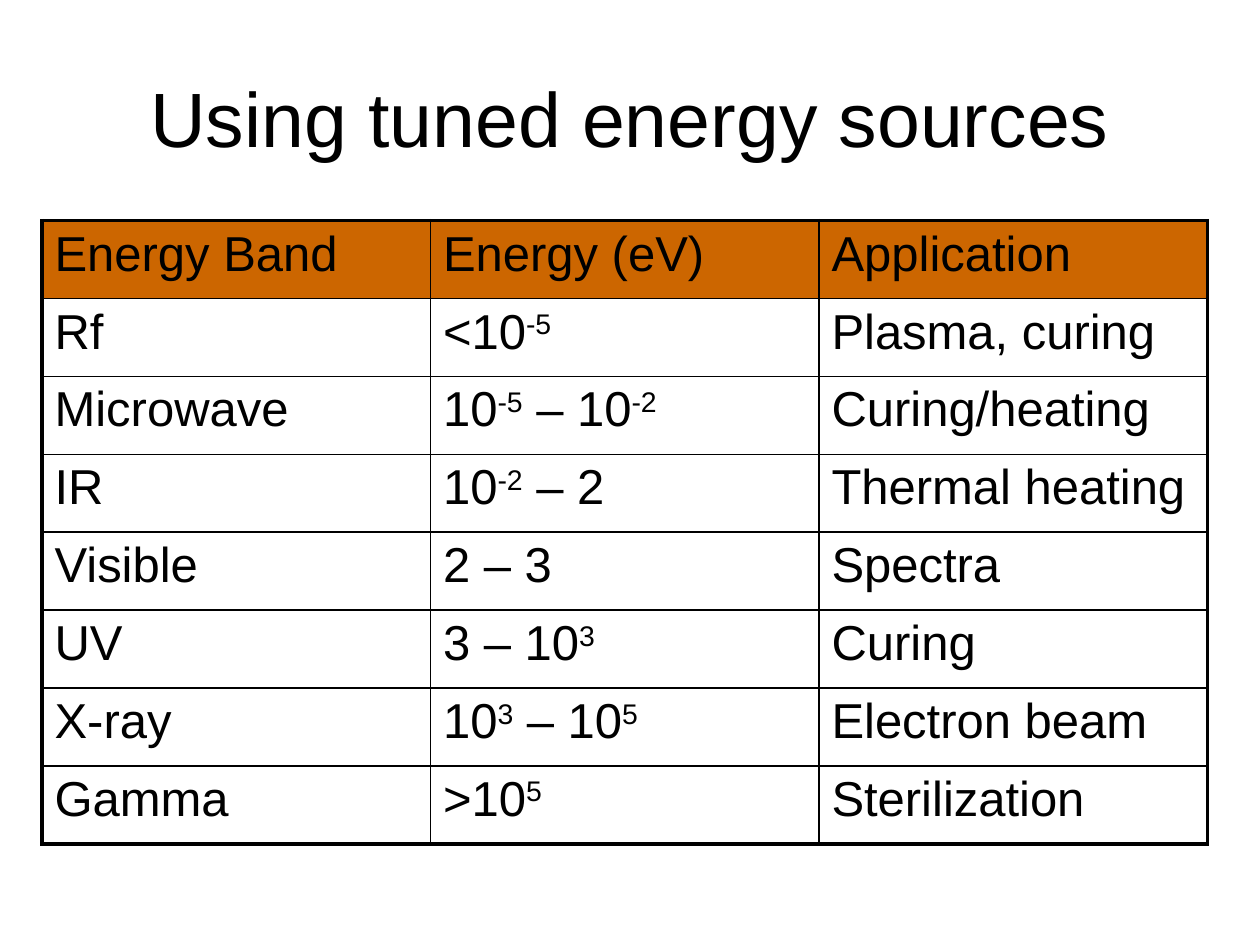
import typing

import lxml.etree
import pptx
import pptx.dml.color
import pptx.enum.text
import pptx.oxml.ns
import pptx.util

Pt = pptx.util.Pt
BLACK = pptx.dml.color.RGBColor(0x00, 0x00, 0x00)
ORANGE = pptx.dml.color.RGBColor(0xCC, 0x66, 0x00)
THIN, THICK = Pt(1), Pt(2.25)
COL, ROW = Pt(222), Pt(44.55)


class Band(typing.NamedTuple):
    name: str
    energy: str  # carets enclose superscripts
    use: str


BANDS = [
    Band("Energy Band", "Energy (eV)", "Application"),
    Band("Rf", "<10^-5^", "Plasma, curing"),
    Band("Microwave", "10^-5^ – 10^-2^", "Curing/heating"),
    Band("IR", "10^-2^ – 2", "Thermal heating"),
    Band("Visible", "2 – 3", "Spectra"),
    Band("UV", "3 – 10^3^", "Curing"),
    Band("X-ray", "10^3^ – 10^5^", "Electron beam"),
    Band("Gamma", ">10^5^", "Sterilization"),
]


def style(font, size: int) -> None:
    for key, value in {"name": "Arial", "size": Pt(size), "bold": False}.items():
        setattr(font, key, value)
    font.color.rgb = BLACK


def write(cell, text: str) -> None:
    """Fill a cell, raising the parts between carets."""
    para = cell.text_frame.paragraphs[0]
    for i, part in enumerate(text.split("^")):
        if part:
            run = para.add_run()
            run.text = part
            style(run.font, 28)
            if i % 2:
                run._r.get_or_add_rPr().set("baseline", "30000")


def border(cell, outer: dict[str, bool]) -> None:
    """Draw the four sides, thick where they lie on the table's edge."""
    props = cell._tc.get_or_add_tcPr()
    qn = pptx.oxml.ns.qn
    for side, edge in outer.items():
        line = lxml.etree.SubElement(
            props, qn(f"a:ln{side}"), w=str(THICK if edge else THIN))
        fill = lxml.etree.SubElement(line, qn("a:solidFill"))
        lxml.etree.SubElement(fill, qn("a:srgbClr"), val=str(BLACK))


def add_title(slide, text: str) -> None:
    title = slide.shapes.title
    place = {"left": Pt(36), "top": Pt(21.6), "width": Pt(648), "height": Pt(90)}
    for key, value in place.items():
        setattr(title, key, value)
    frame = title.text_frame
    frame.text = text
    frame.vertical_anchor = pptx.enum.text.MSO_ANCHOR.MIDDLE
    para = frame.paragraphs[0]
    para.alignment = pptx.enum.text.PP_ALIGN.CENTER
    style(para.runs[0].font, 44)


def add_bands(slide, bands: list[Band]) -> None:
    rows, cols = len(bands), len(Band._fields)
    table = slide.shapes.add_table(
        rows, cols, Pt(24), Pt(126), COL * cols, ROW * rows).table
    table.first_row = table.horz_banding = False
    for col in table.columns:
        col.width = COL
    for r, band in enumerate(bands):
        table.rows[r].height = ROW
        for c, text in enumerate(band):
            cell = table.cell(r, c)
            write(cell, text)
            border(cell, {"L": c == 0, "R": c == cols - 1,
                          "T": r == 0, "B": r == rows - 1})
            if r == 0:
                cell.fill.solid()
                cell.fill.fore_color.rgb = ORANGE
            else:
                cell.fill.background()


def main() -> None:
    deck = pptx.Presentation()
    deck.slide_width, deck.slide_height = Pt(720), Pt(540)
    slide = deck.slides.add_slide(deck.slide_layouts.get_by_name("Title Only"))
    add_title(slide, "Using tuned energy sources")
    add_bands(slide, BANDS)
    deck.save("out.pptx")


if __name__ == "__main__":
    main()
